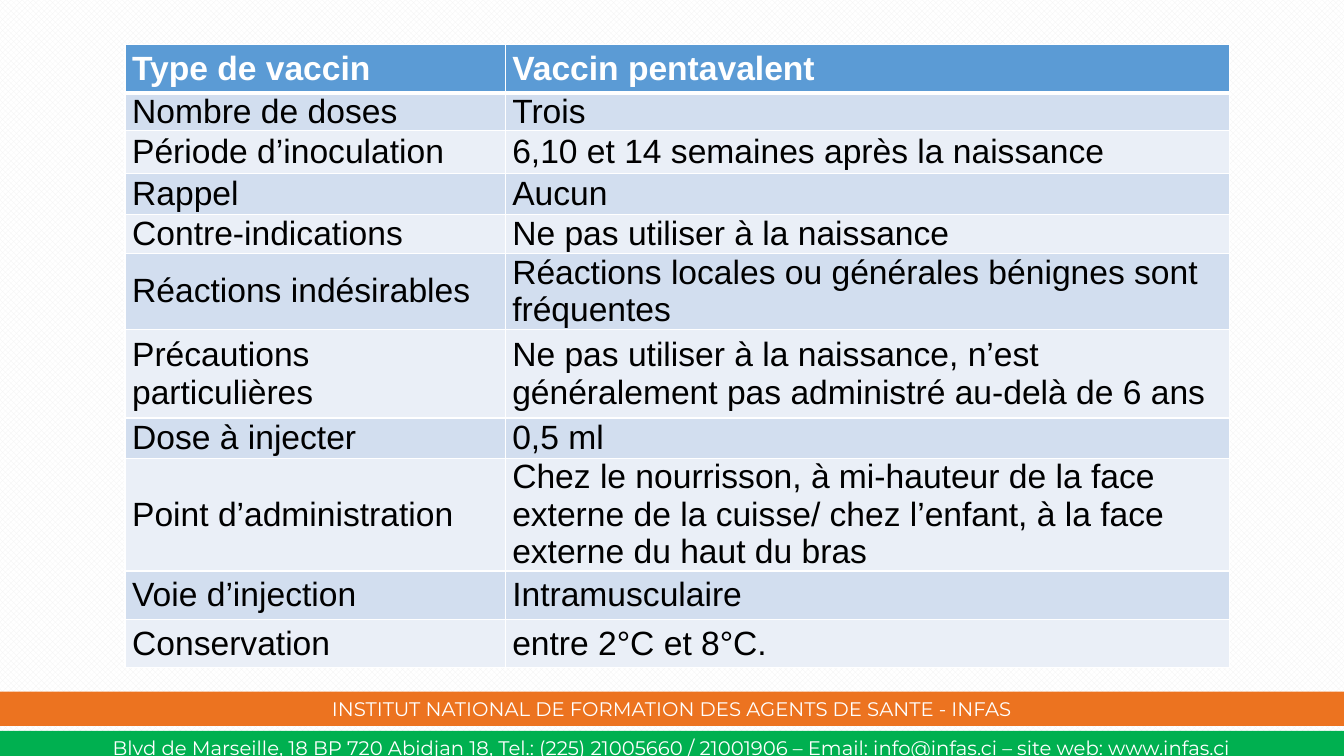
import pptx
import pptx.util
import pptx.dml.color
import pptx.enum.dml
import pptx.enum.shapes
import pptx.enum.text
import pptx.oxml
import pptx.oxml.ns

Cm = pptx.util.Cm
Pt = pptx.util.Pt
RGBColor = pptx.dml.color.RGBColor
Align = pptx.enum.text.PP_ALIGN
Anchor = pptx.enum.text.MSO_ANCHOR

WHITE = RGBColor(0xFF, 0xFF, 0xFF)
BLACK = RGBColor(0x00, 0x00, 0x00)
PALE_GREY = RGBColor(0xF2, 0xF2, 0xF2)
GREEN = RGBColor(0x00, 0xB0, 0x50)
ORANGE = RGBColor(0xEC, 0x73, 0x20)
HEADER_BLUE = RGBColor(0x5B, 0x9B, 0xD5)
BAND_BLUE = RGBColor(0xD2, 0xDE, 0xEF)
BAND_PALE = RGBColor(0xEA, 0xEF, 0xF7)


def apply_format(target, values):
    for name, value in values.items():
        setattr(target, name, value)


def add_border(cell, side, width):
    cell._tc.get_or_add_tcPr().append(pptx.oxml.parse_xml(
        f'<a:{side} {pptx.oxml.ns.nsdecls("a")} w="{int(Pt(width))}">'
        f'<a:solidFill><a:srgbClr val="{WHITE}"/></a:solidFill></a:{side}>'))


presentation = pptx.Presentation()
presentation.slide_width = Cm(33.87)
presentation.slide_height = Cm(19.05)
slide = presentation.slides.add_slide(presentation.slide_layouts[6])

background = slide.background.fill
background.patterned()
background.pattern = pptx.enum.dml.MSO_PATTERN.SOLID_DIAMOND
background.fore_color.rgb = PALE_GREY
background.back_color.rgb = WHITE

footer_bands = [
    ("Blvd de Marseille, 18 BP 720 Abidjan 18, Tel.: (225) 21005660 / 21001906 – "
     "Email: info@infas.ci – site web: www.infas.ci",
     18.42, 0.71, GREEN, Anchor.BOTTOM),
    ("INSTITUT NATIONAL DE FORMATION DES AGENTS DE SANTE - INFAS",
     17.43, 0.86, ORANGE, Anchor.MIDDLE),
]
for text, top, height, color, anchor in footer_bands:
    band = slide.shapes.add_shape(
        pptx.enum.shapes.MSO_SHAPE.RECTANGLE,
        0, Cm(top), presentation.slide_width, Cm(height))
    band.shadow.inherit = False
    band.fill.solid()
    band.fill.fore_color.rgb = color
    band.line.fill.background()
    apply_format(band.text_frame, {
        "word_wrap": True, "vertical_anchor": anchor,
        "margin_top": 0, "margin_bottom": 0})
    paragraph = band.text_frame.paragraphs[0]
    paragraph.text = text
    paragraph.alignment = Align.CENTER
    apply_format(paragraph.font, {"name": "Montserrat", "size": Pt(14)})
    paragraph.font.color.rgb = WHITE

vaccine_rows = [
    (1.22, "Type de vaccin", "Vaccin pentavalent"),
    (0.84, "Nombre de doses", "Trois"),
    (1.09, "Période d’inoculation", "6,10 et 14 semaines après la naissance"),
    (1.04, "Rappel", "Aucun"),
    (0.97, "Contre-indications", "Ne pas utiliser à la naissance"),
    (1.91, "Réactions indésirables",
     "Réactions locales ou générales bénignes sont fréquentes"),
    (2.24, "Précautions particulières",
     "Ne pas utiliser à la naissance, n’est généralement pas administré "
     "au-delà de 6 ans"),
    (1.02, "Dose à injecter", "0,5 ml"),
    (2.51, "Point d’administration",
     "Chez le nourrisson, à mi-hauteur de la face externe de la cuisse/ "
     "chez l’enfant, à la face externe du haut du bras"),
    (1.22, "Voie d’injection", "Intramusculaire"),
    (1.22, "Conservation", "entre 2°C et 8°C."),
]
column_widths = [9.58, 18.26]
table = slide.shapes.add_table(
    len(vaccine_rows), len(column_widths), Cm(3.15), Cm(1.12),
    Cm(sum(column_widths)), Cm(sum(row[0] for row in vaccine_rows))).table
for column, width in zip(table.columns, column_widths):
    column.width = Cm(width)

for row_index, (height, *texts) in enumerate(vaccine_rows):
    table.rows[row_index].height = Cm(height)
    is_header = row_index == 0
    band_color = BAND_BLUE if row_index % 2 else BAND_PALE
    border_widths = {
        "lnL": 1, "lnR": 1,
        "lnT": 3 if row_index == 1 else 1,
        "lnB": 3 if is_header else 1}
    for column_index, text in enumerate(texts):
        cell = table.cell(row_index, column_index)
        for side, width in border_widths.items():
            add_border(cell, side, width)
        cell.fill.solid()
        cell.fill.fore_color.rgb = HEADER_BLUE if is_header else band_color
        apply_format(cell, {
            "vertical_anchor": Anchor.MIDDLE,
            "margin_left": Cm(0.18), "margin_right": Cm(0.18),
            "margin_top": 0, "margin_bottom": 0})
        paragraph = cell.text_frame.paragraphs[0]
        paragraph.text = text
        paragraph.alignment = Align.LEFT if column_index else Align.JUSTIFY
        apply_format(paragraph.font, {
            "name": "Arial", "size": Pt(24), "bold": is_header})
        paragraph.font.color.rgb = WHITE if is_header else BLACK

presentation.save("out.pptx")
